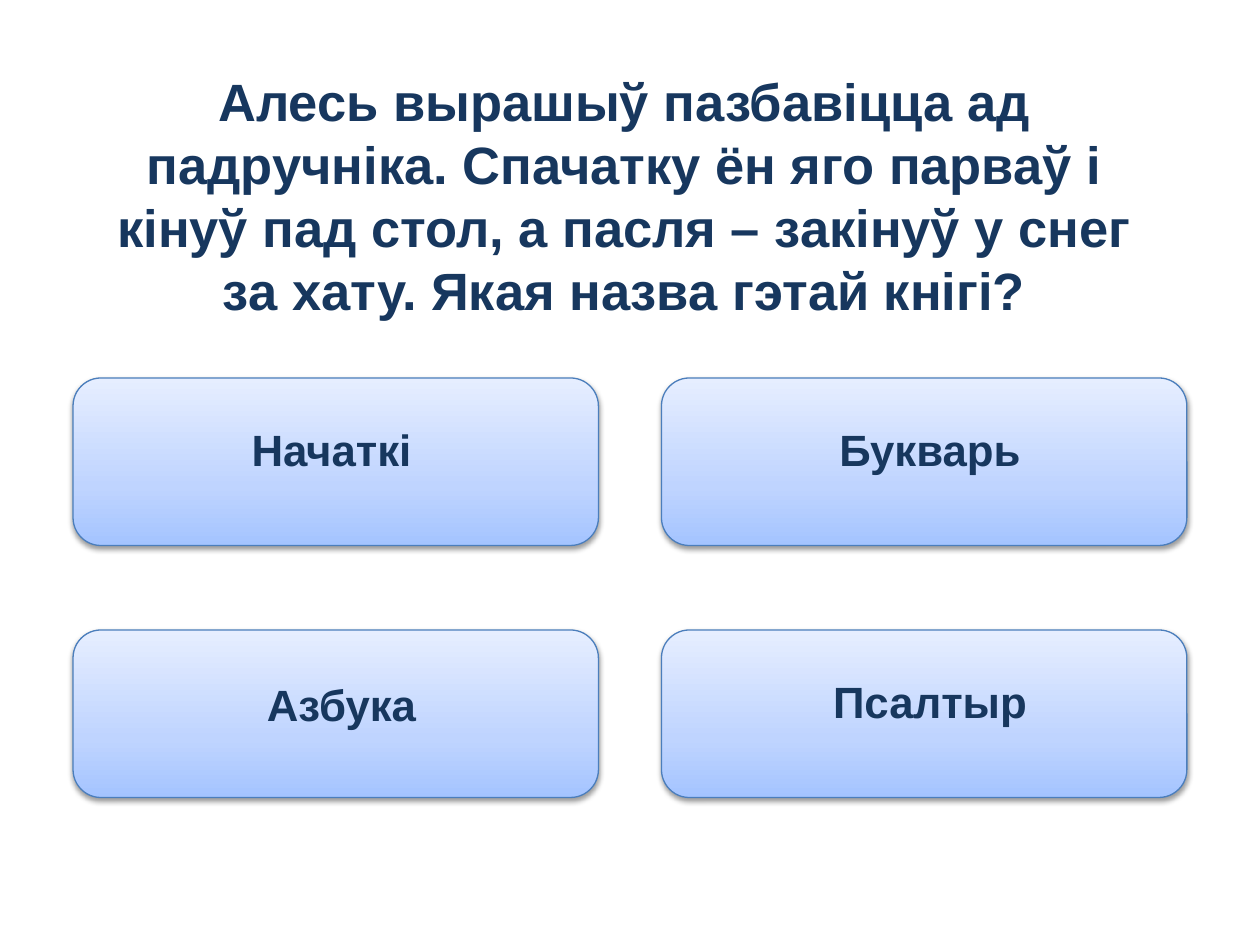
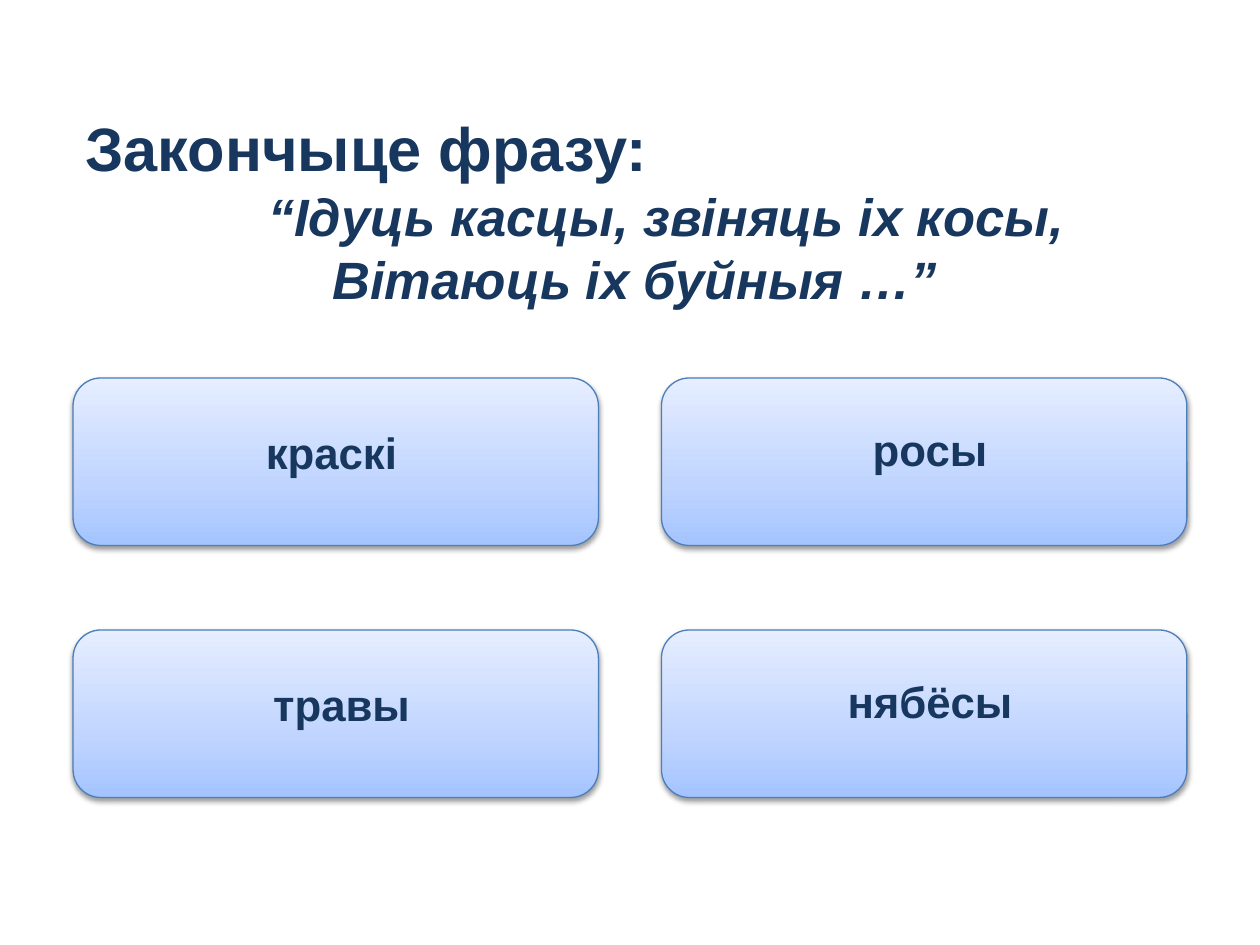
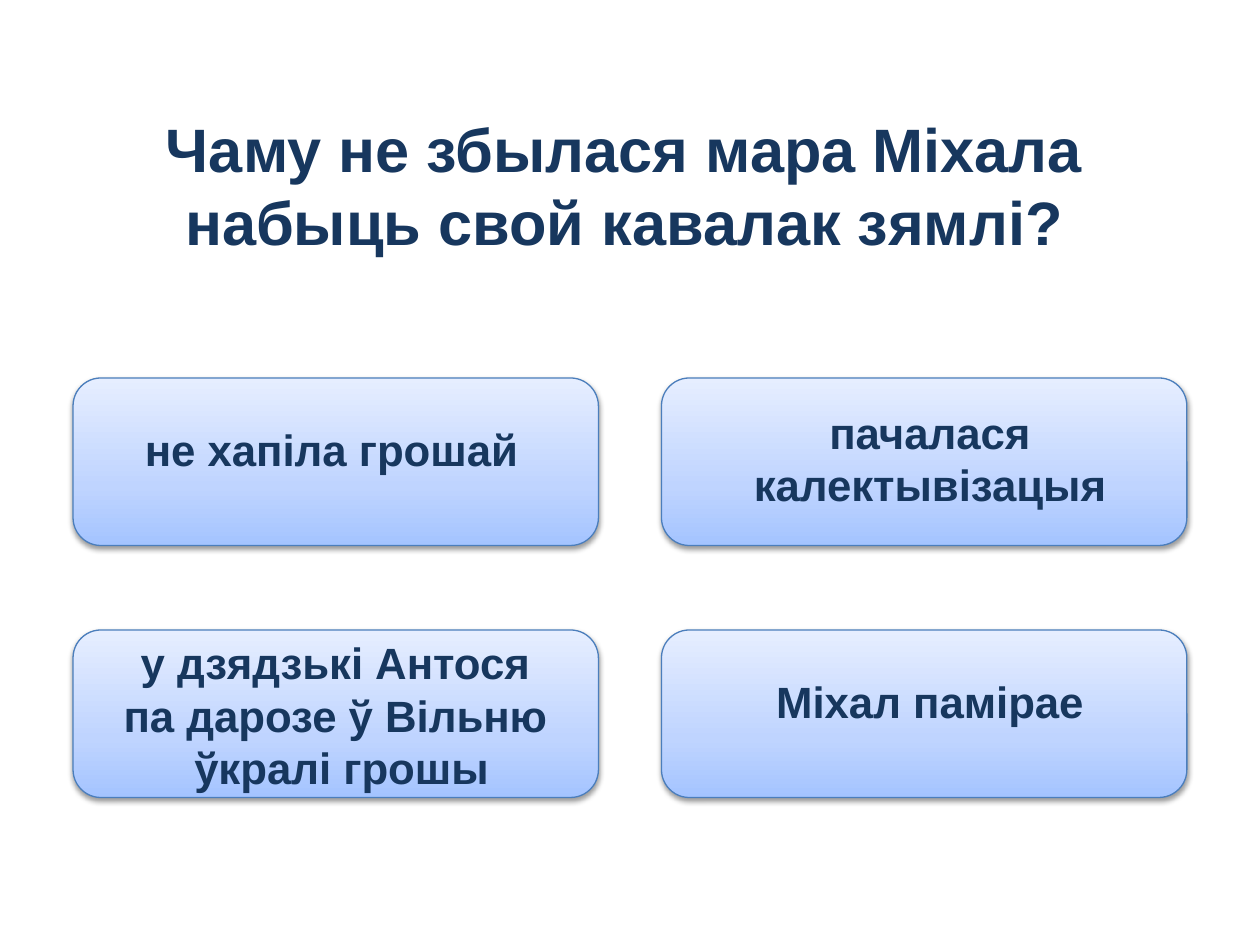
"""Build three quiz slides, each with a question and four answer cards."""
import copy
import dataclasses

import pptx
import pptx.dml.color
import pptx.enum.shapes
import pptx.enum.text
import pptx.oxml
import pptx.oxml.ns
import pptx.util

Inches = pptx.util.Inches
Pt = pptx.util.Pt
rgb = pptx.dml.color.RGBColor.from_string
CENTER = pptx.enum.text.PP_ALIGN.CENTER
LEFT = pptx.enum.text.PP_ALIGN.LEFT


@dataclasses.dataclass(frozen=True)
class Theme:
    """Colours, font and type sizes shared by the slides."""
    font: str = "Arial"
    ink: str = "17375E"
    outline: str = "4B7EBC"
    gradient: tuple = ((0, "A4C4FF"), (0.35, "BFD4FF"), (1, "E6EEFF"))
    large: int = 35
    medium: int = 30
    answer: int = 25


@dataclasses.dataclass(frozen=True)
class Line:
    """One paragraph with its size and style."""
    text: str
    size: int
    align: int = CENTER
    italic: bool = False


THEME = Theme()
CARD_LEFT, CARD_TOP = 0.58, 3
CARD_WIDTH, CARD_HEIGHT = 4.17, 1.33
COLUMN_STEP, ROW_STEP = 4.67, 2
LABEL_SHIFTS = (-0.16, -0.08, -0.08, -0.08)
LABEL_WIDTH = 4.42
SHADOW = (
    f'<a:outerShdw {pptx.oxml.ns.nsdecls("a")} blurRad="40000" dist="20000" '
    'dir="5400000" rotWithShape="0"><a:srgbClr val="000000">'
    '<a:alpha val="38000"/></a:srgbClr></a:outerShdw>'
)

QUIZ = (
    (
        (0.58, 0.5, 8.75, 2.12),
        (Line("Алесь вырашыў пазбавіцца ад падручніка. Спачатку ён яго парваў "
              "і кінуў пад стол, а пасля – закінуў у снег за хату. "
              "Якая назва гэтай кнігі?", THEME.medium),),
        (("Начаткі", 0.31, 0.52), ("Букварь", 0.31, 0.52),
         ("Азбука", 0.33, 0.52), ("Псалтыр", 0.31, 0.52)),
    ),
    (
        (0.58, 0.83, 8.92, 1.7),
        (Line("Закончыце фразу:", THEME.large, LEFT),
         Line("\t“Ідуць касцы, звіняць іх косы,\vВітаюць іх буйныя …”",
              THEME.medium, italic=True)),
        (("краскі", 0.33, 0.52), ("росы", 0.31, 0.52),
         ("травы", 0.33, 0.52), ("нябёсы", 0.31, 0.52)),
    ),
    (
        (0.58, 0.83, 8.75, 1.28),
        (Line("Чаму не збылася мара Міхала набыць свой кавалак зямлі?",
              THEME.large),),
        (("не хапіла грошай", 0.31, 0.52),
         ("пачалася калектывізацыя", 0.17, 0.93),
         ("у дзядзькі Антося \nпа дарозе ў Вільню \nўкралі грошы", 0, 1.35),
         ("Міхал памірае", 0.31, 0.52)),
    ),
)


def add_text(s, box, lines):
    """Add a wrapped text box with one paragraph per line."""
    tf = s.shapes.add_textbox(*map(Inches, box)).text_frame
    tf.word_wrap = True
    tf.auto_size = pptx.enum.text.MSO_AUTO_SIZE.SHAPE_TO_FIT_TEXT
    for i, line in enumerate(lines):
        p = tf.add_paragraph() if i else tf.paragraphs[0]
        p.text = line.text
        p.alignment = line.align
        p.font.name = THEME.font
        p.font.size = Pt(line.size)
        p.font.bold = True
        p.font.italic = line.italic
        p.font.color.rgb = rgb(THEME.ink)


def add_card(s, left, top):
    """Add a rounded card with a vertical gradient and a soft shadow."""
    box = map(Inches, (left, top, CARD_WIDTH, CARD_HEIGHT))
    sp = s.shapes.add_shape(pptx.enum.shapes.MSO_SHAPE.ROUNDED_RECTANGLE, *box)
    sp.line.color.rgb = rgb(THEME.outline)
    sp.line.width = Pt(0.75)
    sp.fill.gradient()
    sp.fill.gradient_angle = 90
    props = sp.element.spPr
    stops = props.find(".//" + pptx.oxml.ns.qn("a:gsLst"))
    stops.append(copy.deepcopy(stops[0]))
    for stop, (position, color) in zip(sp.fill.gradient_stops, THEME.gradient):
        stop.position = position
        stop.color.rgb = rgb(color)
    sp.shadow.inherit = False
    effects = props.find(pptx.oxml.ns.qn("a:effectLst"))
    effects.append(pptx.oxml.parse_xml(SHADOW))


def add_answers(s, answers):
    """Lay out the answers as a grid of two by two labelled cards."""
    for i, (text, drop, height) in enumerate(answers):
        row, column = divmod(i, 2)
        left = CARD_LEFT + column * COLUMN_STEP
        top = CARD_TOP + row * ROW_STEP
        add_card(s, left, top)
        box = (left + LABEL_SHIFTS[i], top + drop, LABEL_WIDTH, height)
        add_text(s, box, [Line(t, THEME.answer) for t in text.split("\n")])


def main():
    """Build and save the quiz."""
    prs = pptx.Presentation()
    prs.slide_width, prs.slide_height = Inches(10), Inches(7.5)
    for box, question, answers in QUIZ:
        s = prs.slides.add_slide(prs.slide_layouts[6])
        add_text(s, box, question)
        add_answers(s, answers)
    prs.save("out.pptx")


if __name__ == "__main__":
    main()
